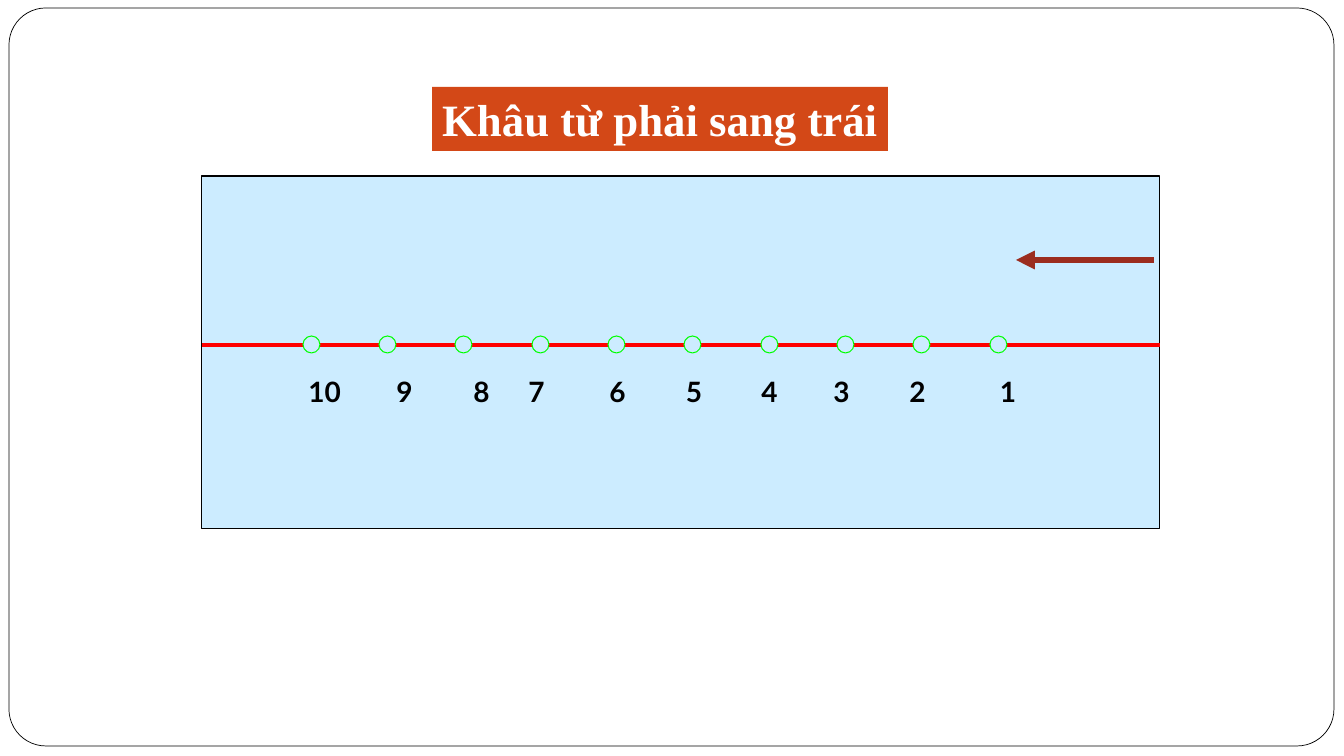
import pptx
import pptx.util
import pptx.dml.color
import pptx.enum.shapes
import pptx.enum.text
import pptx.oxml
import pptx.oxml.ns

SCALE = 914400 / 100.8
KIND = pptx.enum.shapes.MSO_SHAPE
ALIGN = pptx.enum.text.PP_ALIGN
PALE = "CCECFF"
LABELS = [
    ("10", 295, 59), ("9", 375, 59), ("8", 452, 59), ("7", 507, 59),
    ("6", 592, 51), ("5", 673, 42), ("4", 744, 51), ("3", 812, 59),
    ("2", 888, 59), ("1", 974, 68),
]


def px(size):
    return pptx.util.Emu(round(size * SCALE))


def color(code):
    return pptx.dml.color.RGBColor.from_string(code)


def paint(shape, code):
    shape.fill.solid()
    shape.fill.fore_color.rgb = color(code)


def stroke(line, code, width):
    line.color.rgb = color(code)
    line.width = pptx.util.Pt(width)


def add_form(slide, kind, box, fill, edge, width):
    shape = slide.shapes.add_shape(kind, *map(px, box))
    shape.shadow.inherit = False
    paint(shape, fill)
    stroke(shape.line, edge, width)
    return shape


def add_line(slide, start, end, code, width):
    line = slide.shapes.add_connector(
        pptx.enum.shapes.MSO_CONNECTOR.STRAIGHT, *map(px, start + end))
    stroke(line.line, code, width)
    pptx.oxml.ns.qn("a:effectLst")
    line.element.spPr.append(pptx.oxml.parse_xml(
        f"<a:effectLst {pptx.oxml.ns.nsdecls('a')}/>"))
    return line


def add_arrow(slide, start, end, code, width):
    arrow = add_line(slide, start, end, code, width)
    arrow.line.fill
    ln = arrow.element.spPr.find(pptx.oxml.ns.qn("a:ln"))
    ln.append(pptx.oxml.parse_xml(
        f"<a:tailEnd {pptx.oxml.ns.nsdecls('a')} type='triangle'/>"))


def write(shape, text, face, size, code, align):
    frame = shape.text_frame
    frame.text = text
    frame.vertical_anchor = pptx.enum.text.MSO_ANCHOR.TOP
    frame.auto_size = pptx.enum.text.MSO_AUTO_SIZE.NONE
    frame.word_wrap = False
    para = frame.paragraphs[0]
    para.alignment = align
    para.font.name = face
    para.font.size = pptx.util.Pt(size)
    para.font.bold = True
    para.font.color.rgb = color(code)


def add_label(slide, text, left, width):
    label = slide.shapes.add_textbox(px(left), px(370), px(width), px(43))
    paint(label, PALE)
    write(label, text, "Lato", 20, "000000", ALIGN.CENTER)


def set_title(slide, text):
    title = slide.shapes.title
    title.left, title.top, title.width, title.height = map(
        px, (432, 87, 456, 64))
    paint(title, "D34817")
    write(title, text, "Times New Roman", 32, "FFFFFF", ALIGN.LEFT)
    title.element.getparent().append(title.element)


def main():
    deck = pptx.Presentation()
    deck.slide_width, deck.slide_height = px(1344), px(756)
    slide = deck.slides.add_slide(deck.slide_layouts[5])
    frame = add_form(slide, KIND.ROUNDED_RECTANGLE, (9, 8, 1325, 738),
                     "FFFFFF", "000000", 0.5)
    frame.adjustments[0] = 0.05
    add_form(slide, KIND.RECTANGLE, (202, 176, 958, 353),
             PALE, "000000", 0.75)
    for label in LABELS:
        add_label(slide, *label)
    add_line(slide, (202, 345), (1160, 345), "FF0000", 2.25)
    for index in range(len(LABELS)):
        add_form(slide, KIND.OVAL, (303 + 229 * index // 3, 336, 17, 17),
                 PALE, "00FF00", 0.75)
    add_arrow(slide, (1154, 260), (1016, 260), "9B2D1F", 4.5)
    set_title(slide, "Khâu từ phải sang trái")
    deck.save("out.pptx")


if __name__ == "__main__":
    main()
